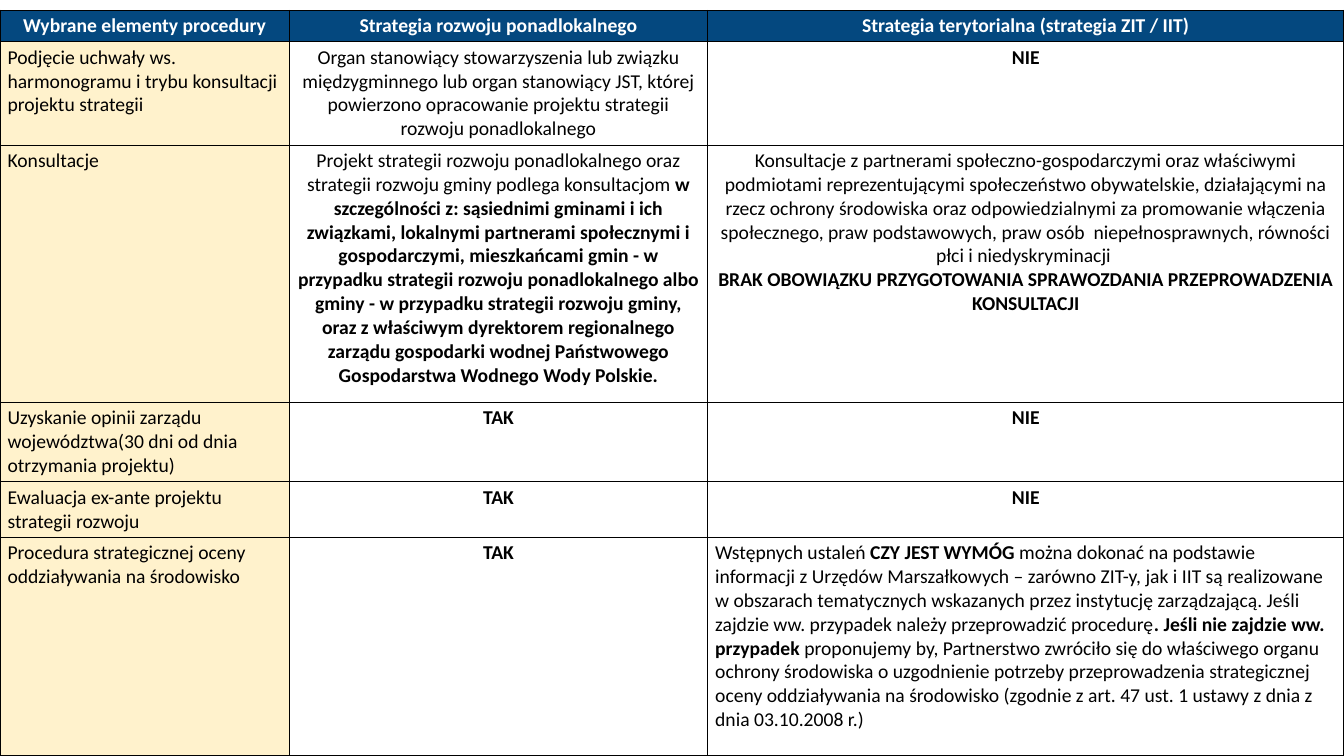
from lxml.etree import SubElement
from pptx import Presentation
from pptx.dml.color import RGBColor
from pptx.enum.text import PP_ALIGN
from pptx.oxml.ns import qn
from pptx.util import Pt

COLUMN_WIDTHS = [206.7, 298.8, 454.5]
ROW_HEIGHTS = [22.5, 73.8, 183.6, 57, 39.4, 156]

# Asterisks switch bold on and off.
ROWS = [
    ["*Wybrane elementy procedury*", "*Strategia rozwoju ponadlokalnego*",
     "*Strategia terytorialna (strategia ZIT / IIT)*"],
    ["Podjęcie uchwały ws. harmonogramu i trybu konsultacji projektu strategii",
     "Organ stanowiący stowarzyszenia lub związku międzygminnego lub organ stanowiący JST, "
     "której powierzono opracowanie projektu strategii rozwoju ponadlokalnego",
     "*NIE*"],
    ["Konsultacje",
     "Projekt strategii rozwoju ponadlokalnego oraz strategii rozwoju gminy podlega konsultacjom "
     "*w szczególności z: sąsiednimi gminami i ich związkami, lokalnymi partnerami społecznymi "
     "i gospodarczymi, mieszkańcami gmin - w przypadku strategii rozwoju ponadlokalnego albo "
     "gminy - w przypadku strategii rozwoju gminy, oraz z właściwym dyrektorem regionalnego "
     "zarządu gospodarki wodnej Państwowego Gospodarstwa Wodnego Wody Polskie.*",
     "Konsultacje z partnerami społeczno-gospodarczymi oraz właściwymi podmiotami "
     "reprezentującymi społeczeństwo obywatelskie, działającymi na rzecz ochrony środowiska "
     "oraz odpowiedzialnymi za promowanie włączenia społecznego, praw podstawowych, "
     "praw osób  niepełnosprawnych, równości płci i niedyskryminacji \n"
     "*BRAK OBOWIĄZKU PRZYGOTOWANIA SPRAWOZDANIA PRZEPROWADZENIA KONSULTACJI*"],
    ["Uzyskanie opinii zarządu województwa(30 dni od dnia otrzymania projektu)", "*TAK*", "*NIE*"],
    ["Ewaluacja ex-ante projektu strategii rozwoju", "*TAK*", "*NIE*"],
    ["Procedura strategicznej oceny oddziaływania na środowisko", "*TAK*",
     "Wstępnych ustaleń *CZY JEST WYMÓG *można dokonać na podstawie informacji z Urzędów "
     "Marszałkowych – zarówno ZIT-y, jak i IIT są realizowane w obszarach tematycznych "
     "wskazanych przez instytucję zarządzającą. Jeśli zajdzie ww. przypadek należy "
     "przeprowadzić procedurę*. Jeśli nie zajdzie ww. przypadek *proponujemy by, Partnerstwo "
     "zwróciło się do właściwego organu ochrony środowiska o uzgodnienie potrzeby "
     "przeprowadzenia strategicznej oceny oddziaływania na środowisko (zgodnie z art. 47 ust. 1 "
     "ustawy z dnia z dnia 03.10.2008 r.)"],
]


def color(value):
    return RGBColor.from_string(value)


def add_borders(cell):
    properties = cell._tc.get_or_add_tcPr()
    for side in ("lnL", "lnR", "lnT", "lnB"):
        line = SubElement(properties, qn(f"a:{side}"), w=str(Pt(0.86)))
        fill = SubElement(line, qn("a:solidFill"))
        SubElement(fill, qn("a:srgbClr"), val="000000")


deck = Presentation()
deck.slide_width, deck.slide_height = Pt(960), Pt(540)
page = deck.slides.add_slide(deck.slide_layouts[6])

table = page.shapes.add_table(
    len(ROWS), len(COLUMN_WIDTHS), Pt(0), Pt(7.4), Pt(sum(COLUMN_WIDTHS)), Pt(sum(ROW_HEIGHTS))
).table
table.horz_banding = False
for column, width in zip(table.columns, COLUMN_WIDTHS):
    column.width = Pt(width)
for row, height in zip(table.rows, ROW_HEIGHTS):
    row.height = Pt(height)

for row_index, texts in enumerate(ROWS):
    for column_index, text in enumerate(texts):
        cell = table.cell(row_index, column_index)
        cell.margin_left = cell.margin_right = Pt(5.4)
        cell.margin_top = cell.margin_bottom = Pt(2.7)
        add_borders(cell)

        is_header = row_index == 0
        if is_header or column_index == 0:
            cell.fill.solid()
            cell.fill.fore_color.rgb = color("04487F" if is_header else "FFF2CC")
        else:
            cell.fill.background()

        is_left = not is_header and (column_index == 0 or text.startswith("Wstępnych"))
        for index, line in enumerate(text.split("\n")):
            frame = cell.text_frame
            paragraph = frame.add_paragraph() if index else frame.paragraphs[0]
            paragraph.alignment = PP_ALIGN.LEFT if is_left else PP_ALIGN.CENTER
            paragraph.font.name = "Calibri"
            paragraph.font.size = Pt(14)
            paragraph.font.color.rgb = color("FFFFFF" if is_header else "000000")
            for part_index, part in enumerate(line.split("*")):
                if part:
                    span = paragraph.add_run()
                    span.text = part
                    span.font.bold = part_index % 2 == 1

deck.save("out.pptx")
